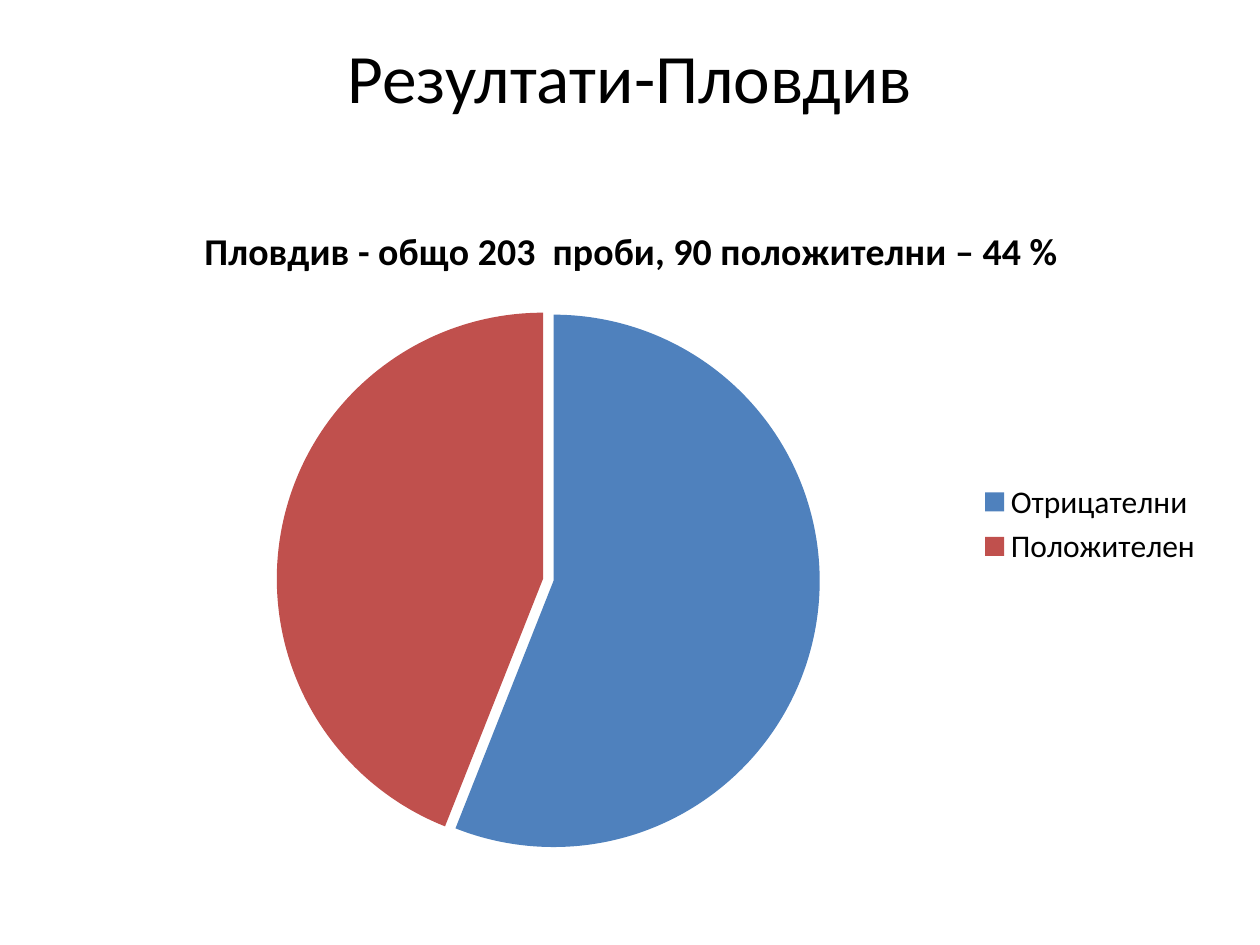
from lxml import etree
from pptx import Presentation
from pptx.chart.data import CategoryChartData
from pptx.dml.color import RGBColor
from pptx.enum.chart import XL_CHART_TYPE, XL_LEGEND_POSITION
from pptx.enum.text import MSO_ANCHOR, PP_ALIGN
from pptx.oxml.ns import qn
from pptx.util import Inches, Pt

PIE = XL_CHART_TYPE.PIE
RIGHT = XL_LEGEND_POSITION.RIGHT
MIDDLE = MSO_ANCHOR.MIDDLE
CENTER = PP_ALIGN.CENTER


def color(value):
    """Turn a hex string into a colour."""
    return RGBColor.from_string(value)


def place(element, **settings):
    """Give a chart part a manual layout."""
    layout = element.find(qn("c:layout"))
    if layout is None:
        layout = etree.Element(qn("c:layout"))
        text = element.find(qn("c:tx"))
        element.insert(0 if text is None else 1, layout)
    for child in list(layout):
        layout.remove(child)
    manual = etree.SubElement(layout, qn("c:manualLayout"))
    for name, value in settings.items():
        etree.SubElement(manual, qn(f"c:{name}")).set("val", str(value))


class SlideBuilder:
    """Holds the text style and the current slide."""

    font_name = "Calibri"
    text_color = "000000"

    def __init__(self, slide):
        """Keep the slide to build on."""
        self.slide = slide

    def style(self, font, size, bold=False):
        """Apply the shared text style."""
        font.name = self.font_name
        font.size = Pt(size)
        font.bold = bold
        font.color.rgb = color(self.text_color)

    def add_run(self, paragraph, text, size, bold=False):
        """Add one styled run."""
        run = paragraph.add_run()
        run.text = text
        self.style(run.font, size, bold)

    def title(self, text, box, size):
        """Add the centred slide title."""
        shape = self.slide.shapes.add_textbox(*map(Inches, box))
        frame = shape.text_frame
        frame.word_wrap = True
        frame.vertical_anchor = MIDDLE
        paragraph = frame.paragraphs[0]
        paragraph.alignment = CENTER
        self.add_run(paragraph, text, size)

    def pie(self, heading, results, box, size, heading_size):
        """Add a pie chart of (label, percent, colour) results."""
        data = CategoryChartData()
        data.categories = [label for label, _, _ in results]
        data.add_series("Series 1", [percent for _, percent, _ in results])
        chart = self.slide.shapes.add_chart(PIE, *map(Inches, box), data).chart
        self.style(chart.font, size)

        chart.has_title = True
        paragraph = chart.chart_title.text_frame.paragraphs[0]
        self.add_run(paragraph, heading, heading_size, bold=True)
        chart.chart_title.include_in_layout = False
        title = chart.chart_title.format and chart._chartSpace.chart.find(qn("c:title"))
        place(title, xMode="edge", yMode="edge", x=0.1, y=0.06)

        chart.has_legend = True
        chart.legend.position = RIGHT
        chart.legend.include_in_layout = False
        self.style(chart.legend.font, size)

        plot = chart.plots[0]
        plot.vary_by_categories = True
        series = plot.series[0]
        for index, (_, _, fill_color) in enumerate(results):
            fill = series.points[index].format.fill
            fill.solid()
            fill.fore_color.rgb = color(fill_color)
        explosion = etree.Element(qn("c:explosion"))
        explosion.set("val", "2")
        series._element.find(qn("c:dPt")).addprevious(explosion)
        plot_area = chart._chartSpace.chart.plotArea
        place(plot_area, layoutTarget="inner", xMode="edge", yMode="edge",
              x=0.17, y=0.19, w=0.48, h=0.78)


def main():
    """Build and save the presentation."""
    presentation = Presentation()
    presentation.slide_width = Inches(10)
    presentation.slide_height = Inches(7.5)
    slide = presentation.slides.add_slide(presentation.slide_layouts[6])
    builder = SlideBuilder(slide)
    builder.title("Резултати-Пловдив", (0.5, 0.3, 9, 0.61), 39.6)
    results = [("Отрицателни", 56, "4F81BD"), ("Положителен", 44, "C0504D")]
    builder.pie("Пловдив - общо 203  проби, 90 положителни – 44 %", results,
                (0.67, 1.39, 8.98, 5.54), 18, 21.6)
    presentation.save("out.pptx")


if __name__ == "__main__":
    main()
